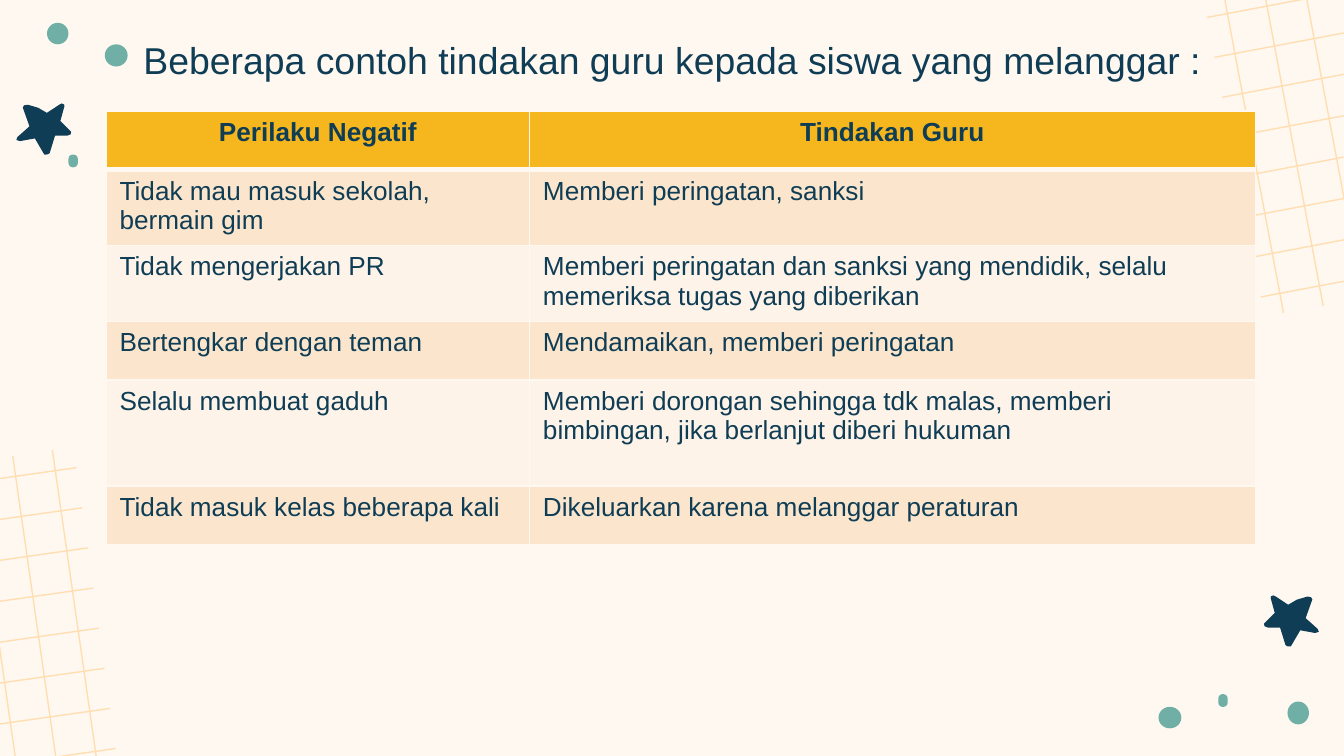
"""Builds a slide with a table of teacher responses to student misbehaviour."""
from typing import NamedTuple

from lxml import etree
from pptx import Presentation
from pptx import util as u
from pptx.dml.color import RGBColor
from pptx.enum import shapes, text
from pptx.oxml.ns import qn

COLS, ROWS = 100, 56.25
CELL = u.Inches(10) / COLS
COLORS = {
    "cream": "FFF8F0", "navy": "0F3D55", "teal": "70AFA5", "peach": "FFDEB1",
    "header": "F5B71D", "odd": "FBE6CD", "even": "FDF3E8",
}


class Dot(NamedTuple):
    left: float
    top: float
    width: float
    height: float
    kind: shapes.MSO_SHAPE = shapes.MSO_SHAPE.OVAL


class Star(NamedTuple):
    left: float
    top: float
    mirrored: bool


class Lines(NamedTuple):
    first: tuple[float, float]
    last: tuple[float, float]
    span: tuple[float, float]
    count: int


PILL = shapes.MSO_SHAPE.ROUNDED_RECTANGLE
DOTS = [
    Dot(3.5, 1.7, 1.6, 1.6), Dot(5.1, 11.5, 0.7, 0.95, PILL), Dot(7.8, 3.3, 1.7, 1.65),
    Dot(95.8, 52.2, 1.6, 1.7), Dot(90.65, 51.65, 0.7, 0.95, PILL), Dot(86.2, 52.6, 1.7, 1.6),
]
STARS = [Star(1.1, 7.7, False), Star(94.05, 44.3, True)]
STAR_WIDTH = 4.2
STAR_OUTLINE = [
    (2.3, 3.8), (2.2, 3.8), (1.5, 2.6), (0.4, 2.8), (0.12, 2.72), (0.2, 2.5),
    (1.1, 1.7), (0.6, 0.3), (0.7, 0.14), (0.9, 0.1), (1, 0.1), (1.75, 0.32),
    (2.4, 0.7), (3.3, 0.1), (3.5, 0), (3.67, 0.07), (3.7, 0.2), (3.4, 1.3),
    (4.2, 2.1), (4.16, 2.3), (3.9, 2.4), (3, 2.4), (2.6, 3.7), (2.45, 3.79),
]
NETS = [
    Lines((93.8, 22.1), (89.8, 1.3), (26.7, -5.05), 8),
    Lines((90.5, -3.4), (96.4, -4.5), (5, 26.7), 3),
    Lines((-21.2, 38.6), (-18.3, 59.5), (26.9, -3.8), 8),
    Lines((3.9, 33.5), (-2, 34.4), (3.85, 26.9), 3),
]
TITLE = "Beberapa contoh tindakan guru kepada siswa yang melanggar :"
COL_WIDTHS = [31.5, 54]
ROW_HEIGHTS = [4.35, 5.65, 5.65, 4.35, 7.9, 4.35]
RECORDS = [
    ("Perilaku Negatif", "Tindakan Guru"),
    ("Tidak mau masuk sekolah, bermain gim", "Memberi peringatan, sanksi"),
    ("Tidak mengerjakan PR",
     "Memberi peringatan dan sanksi yang mendidik, selalu memeriksa tugas yang diberikan"),
    ("Bertengkar dengan teman", "Mendamaikan, memberi peringatan"),
    ("Selalu membuat gaduh",
     "Memberi dorongan sehingga tdk malas, memberi bimbingan, jika berlanjut diberi hukuman"),
    ("Tidak masuk kelas beberapa kali", "Dikeluarkan karena melanggar peraturan"),
]


def grid(*cells: float) -> list[u.Emu]:
    return [u.Emu(round(n * CELL)) for n in cells]


def rgb(name: str) -> RGBColor:
    return RGBColor.from_string(COLORS[name])


def write(tf, content: str, size: float = 14, bold: bool = False,
          align=text.PP_ALIGN.LEFT, color: str = "navy") -> None:
    p = tf.paragraphs[0]
    p.alignment = align
    r = p.add_run()
    r.text = content
    r.font.name, r.font.size, r.font.bold = "Arial", u.Pt(size), bold
    r.font.color.rgb = rgb(color)


def paint(sp, color: str) -> None:
    sp.shadow.inherit = False
    sp.fill.solid()
    sp.fill.fore_color.rgb = rgb(color)
    sp.line.fill.background()


def draw_dot(s, dot: Dot) -> None:
    sp = s.shapes.add_shape(dot.kind, *grid(*dot[:4]))
    if dot.kind == PILL:
        sp.adjustments[0] = 0.45
    paint(sp, "teal")


def draw_star(s, star: Star) -> None:
    points = [(star.left + (STAR_WIDTH - x if star.mirrored else x), star.top + y)
              for x, y in STAR_OUTLINE]
    corners = [tuple(grid(*point)) for point in points]
    builder = s.shapes.build_freeform(*corners[0])
    builder.add_line_segments(corners[1:], close=True)
    paint(builder.convert_to_shape(), "navy")


def draw_lines(s, net: Lines) -> None:
    for i in range(net.count):
        x, y = (a + (b - a) * i / (net.count - 1) for a, b in zip(net.first, net.last))
        ends = grid(x, y, x + net.span[0], y + net.span[1])
        line = s.shapes.add_connector(shapes.MSO_CONNECTOR.STRAIGHT, *ends)
        line.line.color.rgb, line.line.width = rgb("peach"), u.Pt(0.75)
        etree.SubElement(line._element.spPr, qn("a:effectLst"))


def add_borders(cell, row: int) -> None:
    tc_pr = cell._tc.get_or_add_tcPr()
    thick = {"T": row == 1, "B": row == 0}
    for side in "LRTB":
        width = u.Pt(3 if thick.get(side) else 1)
        ln = etree.SubElement(tc_pr, qn(f"a:ln{side}"), w=str(width))
        fill = etree.SubElement(ln, qn("a:solidFill"))
        etree.SubElement(fill, qn("a:srgbClr"), val=COLORS["cream"])


def draw_table(s) -> None:
    frame = grid(7.9, 8.27, sum(COL_WIDTHS), sum(ROW_HEIGHTS))
    table = s.shapes.add_table(len(RECORDS), len(COL_WIDTHS), *frame).table
    for column, width in zip(table.columns, grid(*COL_WIDTHS)):
        column.width = width
    for row, height in zip(table.rows, grid(*ROW_HEIGHTS)):
        row.height = height
    for i, record in enumerate(RECORDS):
        head = i == 0
        align = text.PP_ALIGN.CENTER if head else text.PP_ALIGN.LEFT
        for j, content in enumerate(record):
            cell = table.cell(i, j)
            add_borders(cell, i)
            cell.fill.solid()
            cell.fill.fore_color.rgb = rgb("header" if head else "odd" if i % 2 else "even")
            write(cell.text_frame, content, bold=head, align=align)


def draw_title(s) -> None:
    sp = s.shapes.title
    sp.left, sp.top, sp.width, sp.height = grid(7.9, 1.75, 84.3, 5.3)
    tf = sp.text_frame
    tf.auto_size, tf.word_wrap = text.MSO_AUTO_SIZE.NONE, True
    tf.vertical_anchor = text.MSO_ANCHOR.MIDDLE
    tf.margin_left = tf.margin_right = tf.margin_top = tf.margin_bottom = u.Inches(0.1)
    write(tf, TITLE, size=20, align=text.PP_ALIGN.CENTER)


def main() -> None:
    prs = Presentation()
    prs.slide_width, prs.slide_height = grid(COLS, ROWS)
    s = prs.slides.add_slide(prs.slide_layouts[5])
    s.background.fill.solid()
    s.background.fill.fore_color.rgb = rgb("cream")
    for dot in DOTS:
        draw_dot(s, dot)
    for star in STARS:
        draw_star(s, star)
    for net in NETS:
        draw_lines(s, net)
    draw_title(s)
    draw_table(s)
    prs.save("out.pptx")


if __name__ == "__main__":
    main()
